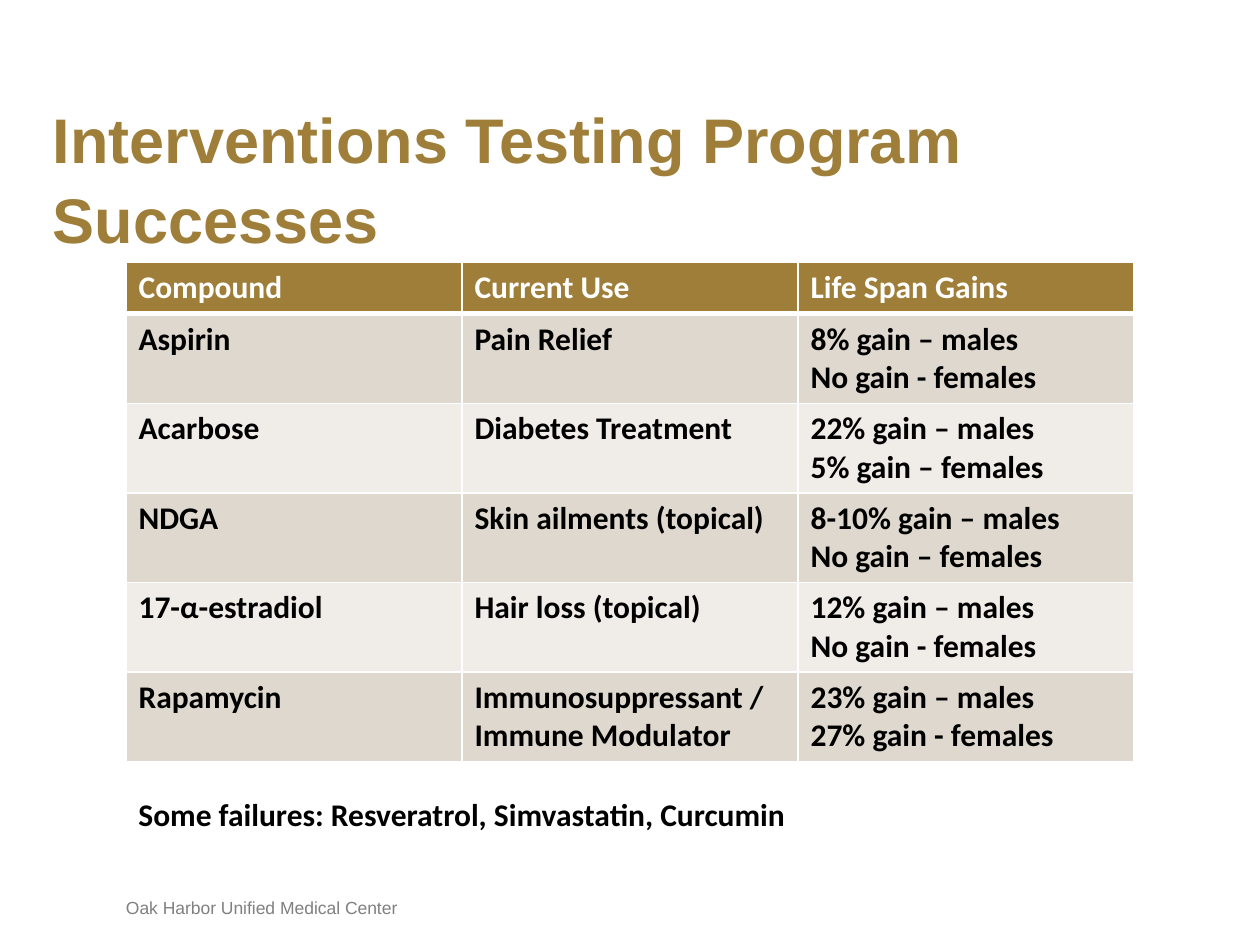
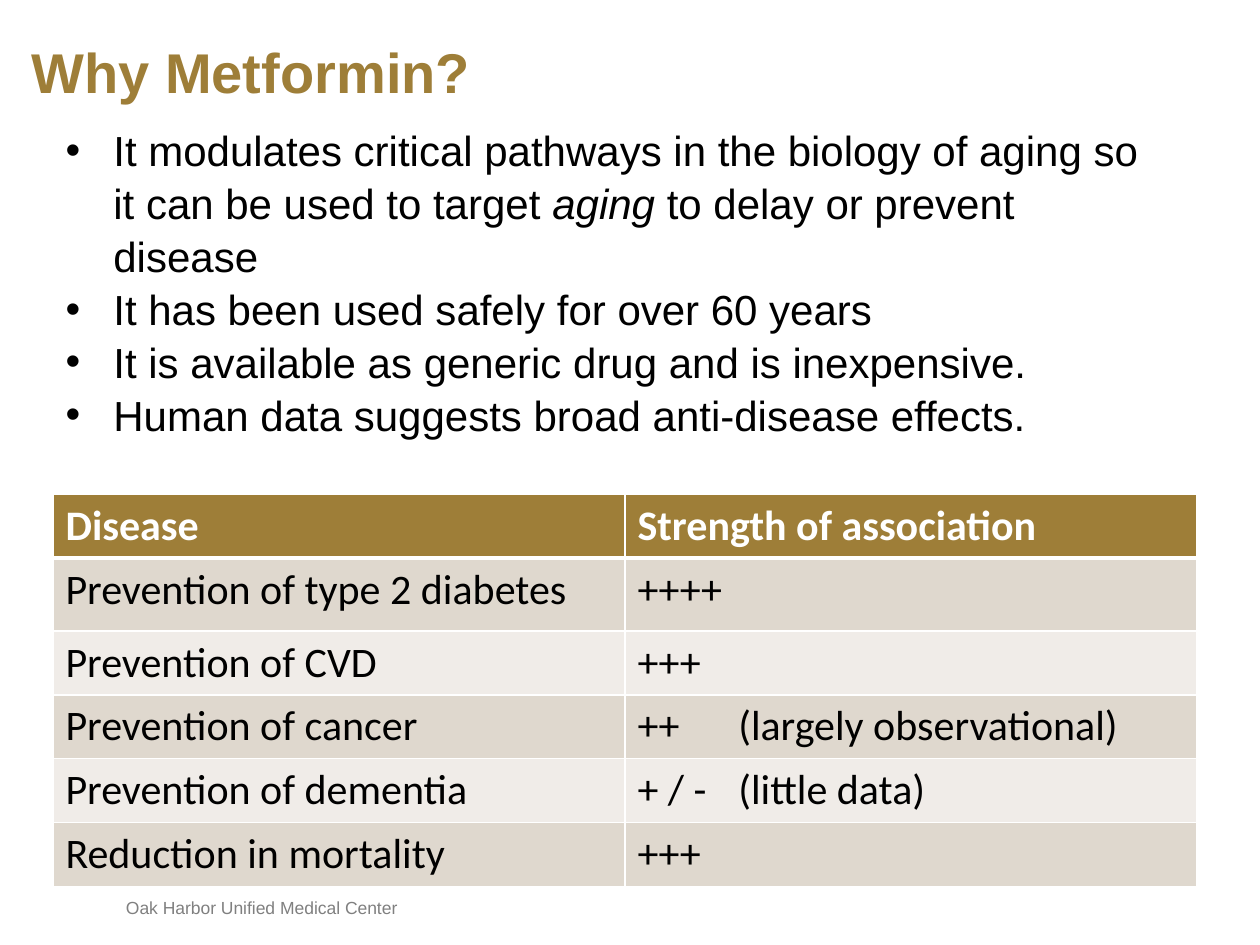
import dataclasses

import lxml.etree
import pptx
import pptx.dml.color
import pptx.enum.text
import pptx.oxml.ns
import pptx.util

Inches = pptx.util.Inches
Pt = pptx.util.Pt
Anchor = pptx.enum.text.MSO_ANCHOR


@dataclasses.dataclass(frozen=True)
class Theme:
    gold: str = "9E7E38"
    band_dark: str = "DFD8CE"
    band_light: str = "F0ECE8"
    white: str = "FFFFFF"
    black: str = "000000"
    grey: str = "808080"
    heading_font: str = "Arial"
    table_font: str = "Calibri"
    title_size: int = 36
    small_title_size: int = 32
    large_size: int = 24
    medium_size: int = 18
    footer_size: int = 10
    line_spacing: float = 1.05
    thin_line: int = 1
    thick_line: int = 3


THEME = Theme()
FOOTER = "Oak Harbor Unified Medical Center"
TITLE_AND_BODY, TITLE_ONLY = 1, 5


def rgb(code):
    return pptx.dml.color.RGBColor.from_string(code)


def add_child(parent, tag, **attributes):
    child = lxml.etree.SubElement(parent, pptx.oxml.ns.qn(tag))
    for name, value in attributes.items():
        child.set(name, str(value))
    return child


def write_span(para, text, size, font, color=THEME.black, bold=False, italic=False):
    span = para.add_run()
    span.text = text
    span.font.size = Pt(size)
    span.font.name = font
    span.font.bold = bold
    span.font.italic = italic
    span.font.color.rgb = rgb(color)


def place(shape, box):
    shape.left, shape.top, shape.width, shape.height = map(Inches, box)


def set_frame(frame, inset=None, anchor=Anchor.TOP, wrap=True):
    frame.auto_size = pptx.enum.text.MSO_AUTO_SIZE.NONE
    frame.word_wrap = wrap
    frame.vertical_anchor = anchor
    if inset is not None:
        frame.margin_left = frame.margin_right = Inches(inset)
        frame.margin_top = frame.margin_bottom = Inches(inset)


def add_label(page, box, text, inset=None, anchor=Anchor.TOP, wrap=True, **style):
    label = page.shapes.add_textbox(*map(Inches, box))
    set_frame(label.text_frame, inset, anchor, wrap)
    write_span(label.text_frame.paragraphs[0], text, **style)


def add_page(deck, layout, title, box, size):
    """Add a slide with its gold title and the shared footer."""
    page = deck.slides.add_slide(deck.slide_layouts[layout])
    add_label(page, (1, 7.12, 3.17, 0.17), FOOTER, inset=0, anchor=Anchor.BOTTOM,
              size=THEME.footer_size, font=THEME.heading_font, color=THEME.grey)
    heading = page.shapes.title
    place(heading, box)
    set_frame(heading.text_frame, inset=0)
    para = heading.text_frame.paragraphs[0]
    para.alignment = pptx.enum.text.PP_ALIGN.LEFT
    para.line_spacing = THEME.line_spacing
    write_span(para, title, size, THEME.heading_font, THEME.gold, bold=True)
    return page


def fill_bullets(body, box, items, indent=0.38):
    """Each item is a list of (text, italic) pairs."""
    place(body, box)
    frame = body.text_frame
    set_frame(frame)
    for number, item in enumerate(items):
        para = frame.add_paragraph() if number else frame.paragraphs[0]
        para.line_spacing = THEME.line_spacing
        para.space_before = Pt(0)
        properties = para._p.get_or_add_pPr()
        properties.set("marL", str(Inches(indent)))
        properties.set("indent", str(-Inches(indent)))
        add_child(properties, "a:buFont", typeface=THEME.heading_font)
        add_child(properties, "a:buChar", char="•")
        for text, italic in item:
            write_span(para, text, THEME.large_size, THEME.heading_font, italic=italic)


def draw_borders(cell, row):
    widths = {"a:lnL": THEME.thin_line, "a:lnR": THEME.thin_line,
              "a:lnT": THEME.thick_line if row == 1 else THEME.thin_line,
              "a:lnB": THEME.thick_line if row == 0 else THEME.thin_line}
    for tag, width in widths.items():
        line = add_child(cell._tc.get_or_add_tcPr(), tag, w=Pt(width))
        add_child(add_child(line, "a:solidFill"), "a:srgbClr", val=THEME.white)


def fill_cell(cell, row, text, size, bold, tab_stop):
    draw_borders(cell, row)
    band = THEME.band_dark if row % 2 else THEME.band_light
    cell.fill.solid()
    cell.fill.fore_color.rgb = rgb(band if row else THEME.gold)
    frame = cell.text_frame
    for number, line in enumerate(text.split("\n")):
        para = frame.add_paragraph() if number else frame.paragraphs[0]
        if "\t" in line:
            stops = add_child(para._p.get_or_add_pPr(), "a:tabLst")
            add_child(stops, "a:tab", pos=Inches(tab_stop), algn="l")
        write_span(para, line, size, THEME.table_font,
                   color=THEME.black if row else THEME.white, bold=bold or row == 0)


def add_banded_table(page, box, rows, heights, size, bold=False, tab_stop=0.8):
    """Add a table with equal columns; box is left, top and width."""
    left, top, width = box
    columns = len(rows[0])
    table = page.shapes.add_table(len(rows), columns, Inches(left), Inches(top),
                                  Inches(width), Inches(sum(heights))).table
    for column in table.columns:
        column.width = Inches(width / columns)
    for row, (texts, height) in enumerate(zip(rows, heights)):
        table.rows[row].height = Inches(height)
        for column, text in enumerate(texts):
            fill_cell(table.cell(row, column), row, text, size, bold, tab_stop)


def build_successes(deck):
    page = add_page(deck, TITLE_ONLY, "Interventions Testing Program Successes",
                    (0.42, 0.77, 9.25, 1.21), THEME.title_size)
    compounds = [
        ("Compound", "Current Use", "Life Span Gains"),
        ("Aspirin", "Pain Relief", "8% gain – males\nNo gain - females"),
        ("Acarbose", "Diabetes Treatment", "22% gain – males\n5% gain – females"),
        ("NDGA", "Skin ailments (topical)", "8-10% gain – males\nNo gain – females"),
        ("17-α-estradiol", "Hair loss (topical)", "12% gain – males\nNo gain - females"),
        ("Rapamycin", "Immunosuppressant / Immune Modulator",
         "23% gain – males\n27% gain - females"),
    ]
    add_banded_table(page, (1, 2.08, 8), compounds, [0.41] + [0.71] * 5,
                     THEME.medium_size, bold=True)
    add_label(page, (1, 6.26, 5.38, 0.4),
              "Some failures: Resveratrol, Simvastatin, Curcumin", wrap=False,
              size=THEME.medium_size, font=THEME.table_font, bold=True)


def build_metformin(deck):
    page = add_page(deck, TITLE_AND_BODY, "Why Metformin?",
                    (0.25, 0.27, 9.67, 0.54), THEME.small_title_size)
    reasons = [
        [("It modulates critical pathways in the biology of aging so it can be used "
          "to target ", False), ("aging ", True), ("to delay or prevent disease", False)],
        [("It has been used safely for over 60 years", False)],
        [("It is available as generic drug and is inexpensive.", False)],
        [("Human data suggests broad anti-disease effects.", False)],
    ]
    fill_bullets(page.placeholders[1], (0.42, 0.92, 8.92, 2.52), reasons)
    associations = [
        ("Disease", "Strength of association"),
        ("Prevention of type 2 diabetes", "++++"),
        ("Prevention of CVD", "+++"),
        ("Prevention of cancer", "++\t(largely observational)"),
        ("Prevention of dementia", "+ / -\t(little data)"),
        ("Reduction in mortality", "+++"),
    ]
    add_banded_table(page, (0.42, 3.92, 9.08), associations,
                     [0.49, 0.58] + [0.49] * 4, THEME.large_size)


def main():
    deck = pptx.Presentation()
    deck.slide_width, deck.slide_height = Inches(10), Inches(7.5)
    build_successes(deck)
    build_metformin(deck)
    deck.save("out.pptx")


if __name__ == "__main__":
    main()
